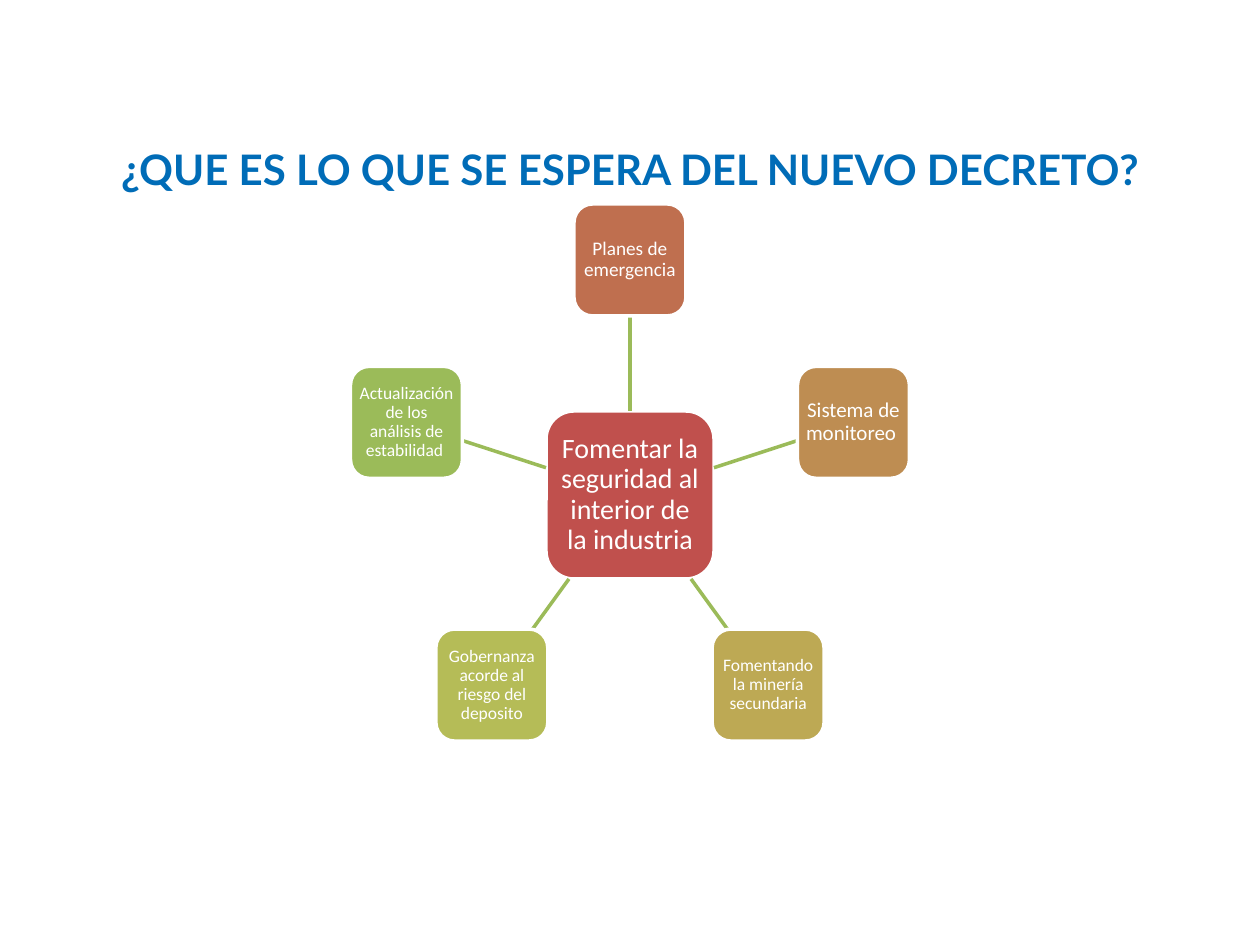
from math import cos, pi, sin

from lxml import etree
from pptx import Presentation
from pptx.dml.color import RGBColor
from pptx.enum.shapes import MSO_CONNECTOR, MSO_SHAPE
from pptx.enum.text import MSO_ANCHOR, PP_ALIGN
from pptx.oxml.ns import qn
from pptx.util import Pt

PX = 7257.14  # EMU per px, at 126 px to the inch
STRAIGHT, ROUNDED = MSO_CONNECTOR.STRAIGHT, MSO_SHAPE.ROUNDED_RECTANGLE
MIDDLE, CENTER = MSO_ANCHOR.MIDDLE, PP_ALIGN.CENTER
TOP_SIDE, BOTTOM_SIDE = 0, 2

WHITE = RGBColor(0xFF, 0xFF, 0xFF)
BLUE = RGBColor(0x00, 0x6C, 0xB7)
RED = RGBColor(0xC0, 0x50, 0x4D)
GREEN = RGBColor(0x9B, 0xBB, 0x59)

# Content
TITLE = "¿QUE ES LO QUE SE ESPERA DEL NUEVO DECRETO?"
HUB = "Fomentar la seguridad al interior de la industria"
# Text, size and fill, clockwise from the top
GOALS = [
    ("Planes de emergencia", 11, RGBColor(0xBF, 0x6F, 0x4F)),
    ("Sistema de monitoreo ", 12, RGBColor(0xBE, 0x8D, 0x52)),
    ("Fomentando la minería secundaria", 10, RGBColor(0xBD, 0xA9, 0x54)),
    ("Gobernanza acorde al riesgo del deposito", 10, RGBColor(0xB5, 0xBC, 0x57)),
    ("Actualización de los análisis de estabilidad ", 10, GREEN),
]

# Layout in px
CENTER_X, CENTER_Y, RADIUS = 630, 495, 235
HUB_SIDE, GOAL_SIDE = 168, 112


def emu(*lengths):
    return [round(n * PX) for n in lengths]


def write(sp, text, inset, spacing, **font):
    tf = sp.text_frame
    tf.word_wrap = True
    tf.vertical_anchor = MIDDLE
    for side in ("left", "top", "right", "bottom"):
        setattr(tf, f"margin_{side}", emu(inset)[0])
    p = tf.paragraphs[0]
    p.alignment = CENTER
    p.line_spacing = spacing
    r = p.add_run()
    r.text = text
    r.font.color.rgb = font.pop("color")
    for name, value in font.items():
        setattr(r.font, name, value)


def add_box(x, y, side, fill, text, size, inset):
    sp = slide.shapes.add_shape(
        ROUNDED, *emu(x - side / 2, y - side / 2, side, side))
    sp.shadow.inherit = False
    sp.fill.solid()
    sp.fill.fore_color.rgb = fill
    sp.line.color.rgb = WHITE
    sp.line.width = Pt(2)
    write(sp, text, inset, 0.9, name="Calibri", size=Pt(size), color=WHITE)
    return sp


def add_spoke(x1, y1, x2, y2):
    line = slide.shapes.add_connector(STRAIGHT, *emu(x1, y1, x2, y2))
    line.line.color.rgb = GREEN
    line.line.width = Pt(2)
    etree.SubElement(line._element.spPr, qn("a:effectLst"))
    return line


prs = Presentation()
prs.slide_width, prs.slide_height = emu(1260, 945)
slide = prs.slides.add_slide(prs.slide_layouts[5])

# Title
title = slide.shapes.title
title.left, title.top, title.width, title.height = emu(82, 158, 1096, 21)
write(title, TITLE, 13, 1, name="Lato", size=Pt(24), bold=True, color=BLUE)

# Hub with goals evenly spaced around it
hub = add_box(CENTER_X, CENTER_Y, HUB_SIDE, RED, HUB, 16, 5)
for i, (text, size, fill) in enumerate(GOALS):
    angle = 2 * pi * i / len(GOALS)
    dx, dy = sin(angle), -cos(angle)
    x, y = CENTER_X + RADIUS * dx, CENTER_Y + RADIUS * dy
    # Each spoke runs between the edges of the two squares
    reach = 1 / max(abs(dx), abs(dy)) / 2
    start, end = HUB_SIDE * reach, RADIUS - GOAL_SIDE * reach
    spoke = add_spoke(CENTER_X + start * dx, CENTER_Y + start * dy,
                      CENTER_X + end * dx, CENTER_Y + end * dy)
    goal = add_box(x, y, GOAL_SIDE, fill, text, size, 3)
    if i == 0:
        spoke.begin_connect(hub, TOP_SIDE)
        spoke.end_connect(goal, BOTTOM_SIDE)

prs.save("out.pptx")
